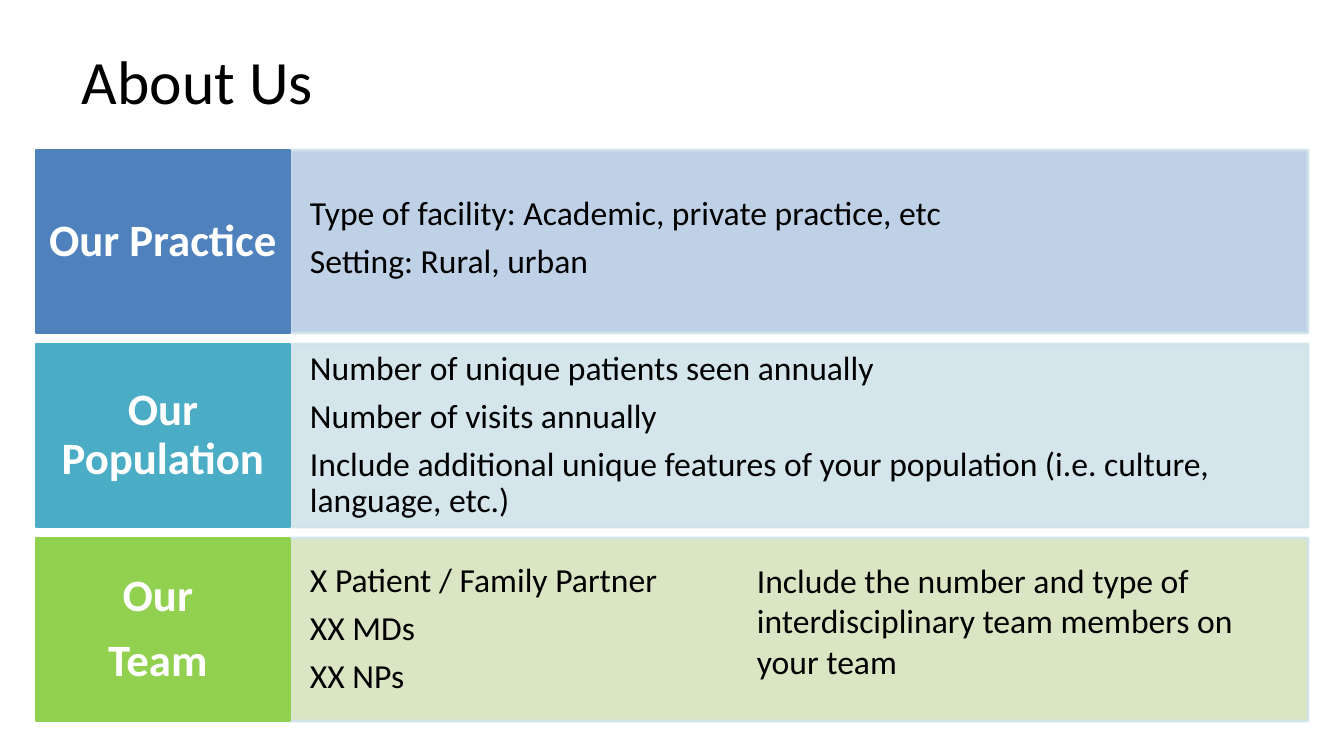
import pptx
import pptx.util
import pptx.dml.color
import pptx.enum.shapes
import pptx.enum.text
import lxml.etree

ANCHOR = pptx.enum.text.MSO_ANCHOR
ALIGN = pptx.enum.text.PP_ALIGN
PX = 914400 / 100.8


def px(length):
    return pptx.util.Emu(round(length * PX))


def color(hex_string):
    return pptx.dml.color.RGBColor.from_string(hex_string)


presentation = pptx.Presentation()
presentation.slide_width = px(1344)
presentation.slide_height = px(756)
slide = presentation.slides.add_slide(presentation.slide_layouts[6])

# Rows: label, label colour, details, detail colour, detail anchor
rows = [
    ("Our Practice", "4F81BD",
     "Type of facility: Academic, private practice, etc\nSetting: Rural, urban",
     "B9CDE5", ANCHOR.TOP),
    ("Our Population", "4BACC6",
     "Number of unique patients seen annually\nNumber of visits annually\n"
     "Include additional unique features of your population "
     "(i.e. culture, language, etc.)",
     "D0E3EA", ANCHOR.MIDDLE),
    ("Our \nTeam ", "92D050",
     "X Patient / Family Partner\nXX MDs\nXX NPs",
     "D7E4BD", ANCHOR.MIDDLE),
]
ROW_TOP, ROW_HEIGHT, ROW_GAP = 150, 183, 11
LABEL_LEFT, LABEL_WIDTH, DETAIL_WIDTH = 36, 254, 1018

for index, (label, label_color, details, detail_color, anchor) in enumerate(rows):
    top = ROW_TOP + index * (ROW_HEIGHT + ROW_GAP)
    # Each cell: left, width, text, fill, line, opacity, anchor, alignment,
    # side inset, vertical inset, text size, text colour, bold
    cells = [
        (LABEL_LEFT + LABEL_WIDTH, DETAIL_WIDTH, details, detail_color, "D0E3EA", 90,
         anchor, ALIGN.LEFT, 20, 46, 24, "000000", False),
        (LABEL_LEFT, LABEL_WIDTH, label, label_color, label_color, 100,
         ANCHOR.MIDDLE, ALIGN.CENTER, 13, 18, 32, "FFFFFF", True),
    ]
    for (left, width, text, fill, line, opacity, cell_anchor, alignment,
         side, vertical, size, text_color, bold) in cells:
        shape = slide.shapes.add_shape(
            pptx.enum.shapes.MSO_SHAPE.RECTANGLE,
            px(left), px(top), px(width), px(ROW_HEIGHT))
        shape.shadow.inherit = False
        shape.fill.solid()
        shape.fill.fore_color.rgb = color(fill)
        shape.line.color.rgb = color(line)
        shape.line.width = pptx.util.Pt(2)

        # Transparency of fill and line
        if opacity < 100:
            for element in shape.element.spPr.iter(pptx.oxml.ns.qn("a:srgbClr")):
                lxml.etree.SubElement(
                    element, pptx.oxml.ns.qn("a:alpha"), val=str(opacity * 1000))

        frame = shape.text_frame
        frame.word_wrap = True
        frame.vertical_anchor = cell_anchor
        frame.margin_left = frame.margin_right = px(side)
        frame.margin_top = frame.margin_bottom = px(vertical)
        frame.text = text
        for paragraph in frame.paragraphs:
            paragraph.alignment = alignment
            paragraph.line_spacing = 0.9
            paragraph.space_after = pptx.util.Pt(size * 0.35)
            for run in paragraph.runs:
                run.font.name = "Calibri"
                run.font.size = pptx.util.Pt(size)
                run.font.bold = bold
                run.font.color.rgb = color(text_color)

# Title and team note
text_boxes = [
    (72, 11, 869, 112, "About Us", 44, ANCHOR.BOTTOM, 0.9),
    (747, 555, 550, 132, "Include the number and type of interdisciplinary "
     "team members on your team", 24, ANCHOR.TOP, 1.0),
]
for left, top, width, height, text, size, anchor, spacing in text_boxes:
    text_box = slide.shapes.add_textbox(px(left), px(top), px(width), px(height))
    frame = text_box.text_frame
    frame.word_wrap = True
    frame.vertical_anchor = anchor
    frame.text = text
    paragraph = frame.paragraphs[0]
    paragraph.line_spacing = spacing
    font = paragraph.runs[0].font
    font.name = "Calibri"
    font.size = pptx.util.Pt(size)
    font.color.rgb = color("000000")

presentation.save("out.pptx")
